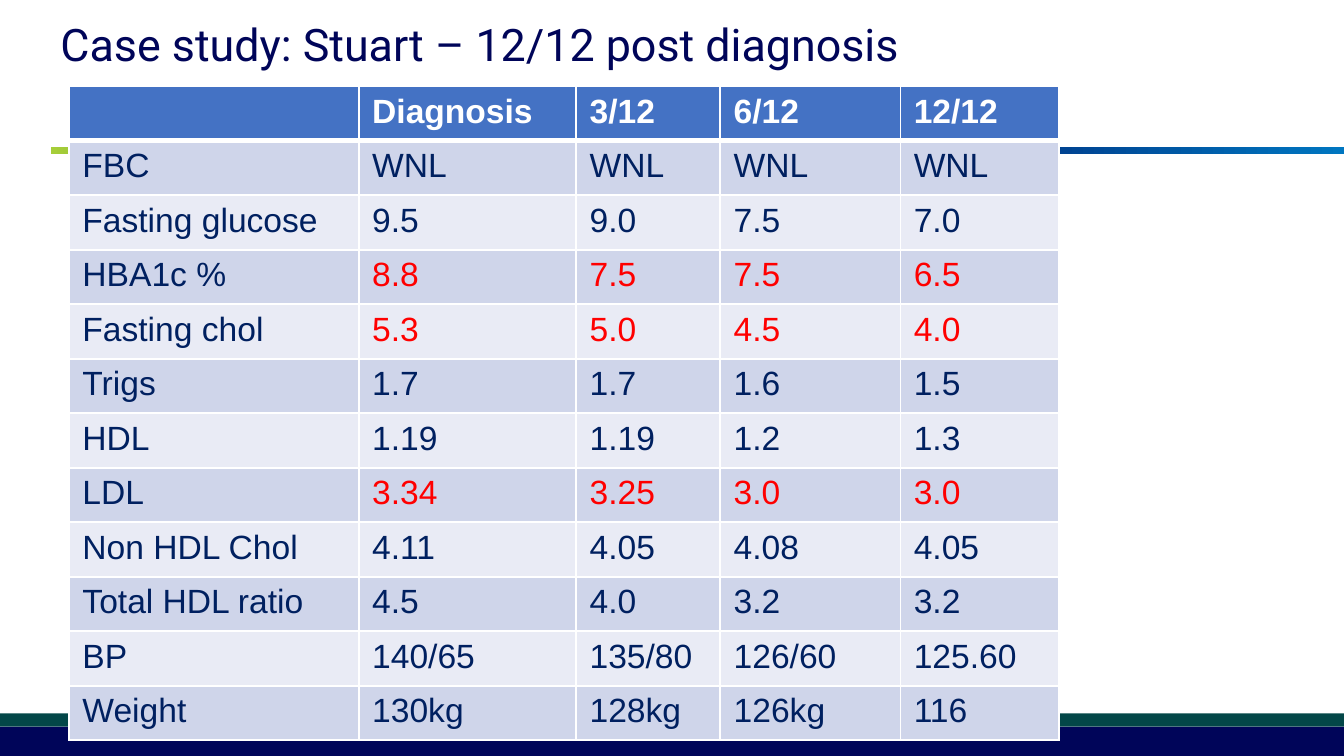
from copy import deepcopy

from lxml.etree import SubElement
from pptx import Presentation
from pptx.dml.color import RGBColor
from pptx.enum.shapes import MSO_SHAPE
from pptx.enum.text import MSO_ANCHOR, PP_ALIGN
from pptx.oxml.ns import qn
from pptx.util import Pt

WIDTH, HEIGHT = 720, 405
WHITE = RGBColor(0xFF, 0xFF, 0xFF)
NAVY = RGBColor(0x00, 0x05, 0x59)
TEAL = RGBColor(0x03, 0x47, 0x48)
GREEN = RGBColor(0xA6, 0xCE, 0x39)
BLUE = RGBColor(0x00, 0x76, 0xC0)
HEADER_BLUE = RGBColor(0x44, 0x72, 0xC4)
BAND_DARK = RGBColor(0xCF, 0xD5, 0xEA)
BAND_LIGHT = RGBColor(0xE9, 0xEB, 0xF5)
TEXT_BLUE = RGBColor(0x00, 0x20, 0x60)
RED = RGBColor(0xFF, 0x00, 0x00)

RULE_STOPS = [(0, GREEN), (0.36, TEAL), (0.52, NAVY), (1, BLUE)]
COLUMN_WIDTHS = [155.2, 116.5, 77.2, 96.5, 85]
ROWS = [
    ["", "Diagnosis", "3/12", "6/12", "12/12"],
    ["FBC", "WNL", "WNL", "WNL", "WNL"],
    ["Fasting glucose", "9.5", "9.0", "7.5", "7.0"],
    ["HBA1c %", "8.8", "7.5", "7.5", "6.5"],
    ["Fasting chol", "5.3", "5.0", "4.5", "4.0"],
    ["Trigs", "1.7", "1.7", "1.6", "1.5"],
    ["HDL", "1.19", "1.19", "1.2", "1.3"],
    ["LDL", "3.34", "3.25", "3.0", "3.0"],
    ["Non HDL Chol", "4.11", "4.05", "4.08", "4.05"],
    ["Total HDL ratio", "4.5", "4.0", "3.2", "3.2"],
    ["BP", "140/65", "135/80", "126/60", "125.60"],
    ["Weight", "130kg", "128kg", "126kg", "116"],
]
HIGHLIGHTED = {"HBA1c %", "Fasting chol", "LDL"}


def format_font(font, color, **values):
    for name, value in values.items():
        setattr(font, name, value)
    font.color.rgb = color


def add_bar(slide, box, color=None):
    shape = slide.shapes.add_shape(MSO_SHAPE.RECTANGLE, *map(Pt, box))
    shape.shadow.inherit = False
    shape.line.fill.background()
    if color is not None:
        shape.fill.solid()
        shape.fill.fore_color.rgb = color
    return shape


def add_gradient_rule(slide, box):
    fill = add_bar(slide, box).fill
    fill.gradient()
    fill.gradient_angle = 0
    stop_list = slide.shapes[-1].element.spPr.find(
        f"{qn('a:gradFill')}/{qn('a:gsLst')}")
    while len(stop_list) < len(RULE_STOPS):
        stop_list.append(deepcopy(stop_list[0]))
    for stop, (position, color) in zip(fill.gradient_stops, RULE_STOPS):
        stop.position = position
        stop.color.rgb = color


def add_footer(slide, box):
    left, top, width, height = box
    stripe = 7.2
    add_bar(slide, (left, top, width, stripe), TEAL)
    add_bar(slide, (left, top + stripe, width, height - stripe), NAVY)


def place_title(slide, box, text):
    title = slide.shapes.title
    for name, value in zip(("left", "top", "width", "height"), box):
        setattr(title, name, Pt(value))
    frame = title.text_frame
    frame.text = text
    frame.word_wrap = True
    frame.vertical_anchor = MSO_ANCHOR.MIDDLE
    paragraph = frame.paragraphs[0]
    paragraph.alignment = PP_ALIGN.LEFT
    format_font(paragraph.runs[0].font, NAVY, name="Roboto", size=Pt(24))


def set_borders(cell, widths):
    properties = cell._tc.get_or_add_tcPr()
    for side, width in widths.items():
        line = SubElement(properties, qn(f"a:ln{side}"), w=str(Pt(width)))
        solid = SubElement(line, qn("a:solidFill"))
        SubElement(solid, qn("a:srgbClr"), val=str(WHITE))


def add_results_table(slide, box):
    shape = slide.shapes.add_table(len(ROWS), len(COLUMN_WIDTHS), *map(Pt, box))
    table = shape.table
    for column, width in zip(table.columns, COLUMN_WIDTHS):
        column.width = Pt(width)
    for row_index, values in enumerate(ROWS):
        table.rows[row_index].height = Pt(box[3] / len(ROWS))
        header = row_index == 0
        fill = HEADER_BLUE if header else (BAND_LIGHT, BAND_DARK)[row_index % 2]
        borders = {"L": 1, "R": 1, "T": 3 if row_index == 1 else 1,
                   "B": 3 if header else 1}
        for column_index, text in enumerate(values):
            cell = table.cell(row_index, column_index)
            set_borders(cell, borders)
            cell.fill.solid()
            cell.fill.fore_color.rgb = fill
            cell.text = text
            highlighted = column_index > 0 and values[0] in HIGHLIGHTED
            color = WHITE if header else RED if highlighted else TEXT_BLUE
            format_font(cell.text_frame.paragraphs[0].font, color,
                        name="Arial", size=Pt(18), bold=header)


def main():
    presentation = Presentation()
    presentation.slide_width, presentation.slide_height = Pt(WIDTH), Pt(HEIGHT)
    slide = presentation.slides.add_slide(presentation.slide_layouts[5])
    add_footer(slide, (0, 382.2, WIDTH, HEIGHT - 382.2))
    add_gradient_rule(slide, (27.4, 79, WIDTH - 27.4, 3.6))
    place_title(slide, (25.2, -2, 684.7, 50.4),
                "Case study: Stuart – 12/12 post diagnosis")
    add_results_table(slide, (37, 46.2, sum(COLUMN_WIDTHS), 350.4))
    presentation.save("out.pptx")


if __name__ == "__main__":
    main()
